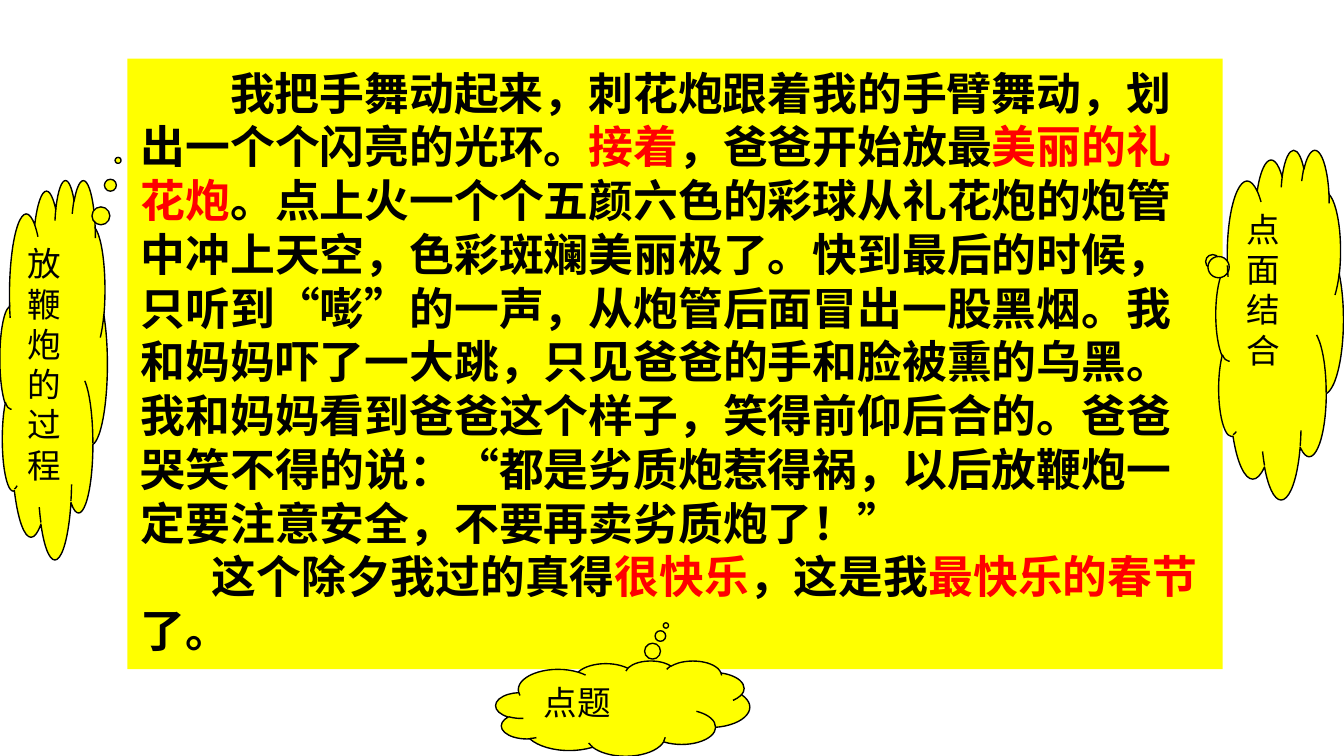
from pptx import Presentation
from pptx import util as u
from pptx.dml.color import RGBColor
from pptx.enum import shapes, text

YELLOW, BLACK, RED = "FFFF00", "000000", "FF0000"


def colour(hex_string):
    return RGBColor.from_string(hex_string)


def add_run(paragraph, words, hex_string, **formats):
    run = paragraph.add_run()
    run.text = words
    run.font.color.rgb = colour(hex_string)
    for name, value in {"name": "Arial", **formats}.items():
        setattr(run.font, name, value)


deck = Presentation()
deck.slide_width, deck.slide_height = u.Cm(25.4), u.Cm(14.29)
page = deck.slides.add_slide(deck.slide_layouts[6])

# Essay passage: first-line indent, then runs with key phrases in red
passage = [
    (1.69, [
        ("我把手舞动起来，刺花炮跟着我的手臂舞动，划出一个个闪亮的光环。", BLACK),
        ("接着", RED),
        ("，爸爸开始放最", BLACK),
        ("美丽的礼花炮", RED),
        ("。点上火一个个五颜六色的彩球从礼花炮的炮管中冲上天空，色彩斑斓美丽极了。"
         "快到最后的时候，只听到“嘭”的一声，从炮管后面冒出一股黑烟。"
         "我和妈妈吓了一大跳，只见爸爸的手和脸被熏的乌黑。"
         "我和妈妈看到爸爸这个样子，笑得前仰后合的。"
         "爸爸哭笑不得的说：“都是劣质炮惹得祸，以后放鞭炮一定要注意安全，不要再卖劣质炮了！”", BLACK),
    ]),
    (1.34, [
        ("这个除夕我过的真得", BLACK),
        ("很快乐", RED),
        ("，这是我", BLACK),
        ("最快乐的春节", RED),
        ("了。", BLACK),
    ]),
]
essay = page.shapes.add_textbox(u.Cm(2.41), u.Cm(1.11), u.Cm(20.7), u.Cm(11.54))
essay.fill.solid()
essay.fill.fore_color.rgb = colour(YELLOW)
essay.text_frame.word_wrap = True
for number, (indent, phrases) in enumerate(passage):
    paragraph = essay.text_frame.add_paragraph() if number else essay.text_frame.paragraphs[0]
    paragraph._p.get_or_add_pPr().set("indent", str(u.Cm(indent)))
    for words, hex_string in phrases:
        add_run(paragraph, words, hex_string, size=u.Pt(24), bold=True)

# Cloud comments: words, box in cm, pointer offset
comments = [
    ("点题", (9.37, 12.49, 4.8, 1.8), (0.17, -0.87)),
    ("放鞭炮的过程", (0, 3.39, 2.03, 7.17), (0.6, -0.55)),
    ("点面结合", (22.98, 2.82, 2.41, 6.61), (-0.53, -0.18)),
]
for words, box, pointer in comments:
    cloud = page.shapes.add_shape(shapes.MSO_SHAPE.CLOUD_CALLOUT, *map(u.Cm, box))
    cloud.shadow.inherit = False
    for axis, offset in enumerate(pointer):
        cloud.adjustments[axis] = offset
    cloud.fill.solid()
    cloud.fill.fore_color.rgb = colour(YELLOW)
    cloud.line.color.rgb = colour(BLACK)
    cloud.line.width = u.Pt(0.75)
    frame = cloud.text_frame
    for name, value in {"word_wrap": True, "vertical_anchor": text.MSO_ANCHOR.TOP}.items():
        setattr(frame, name, value)
    frame.paragraphs[0].alignment = text.PP_ALIGN.LEFT
    add_run(frame.paragraphs[0], words, BLACK, size=u.Pt(18))

deck.save("out.pptx")
